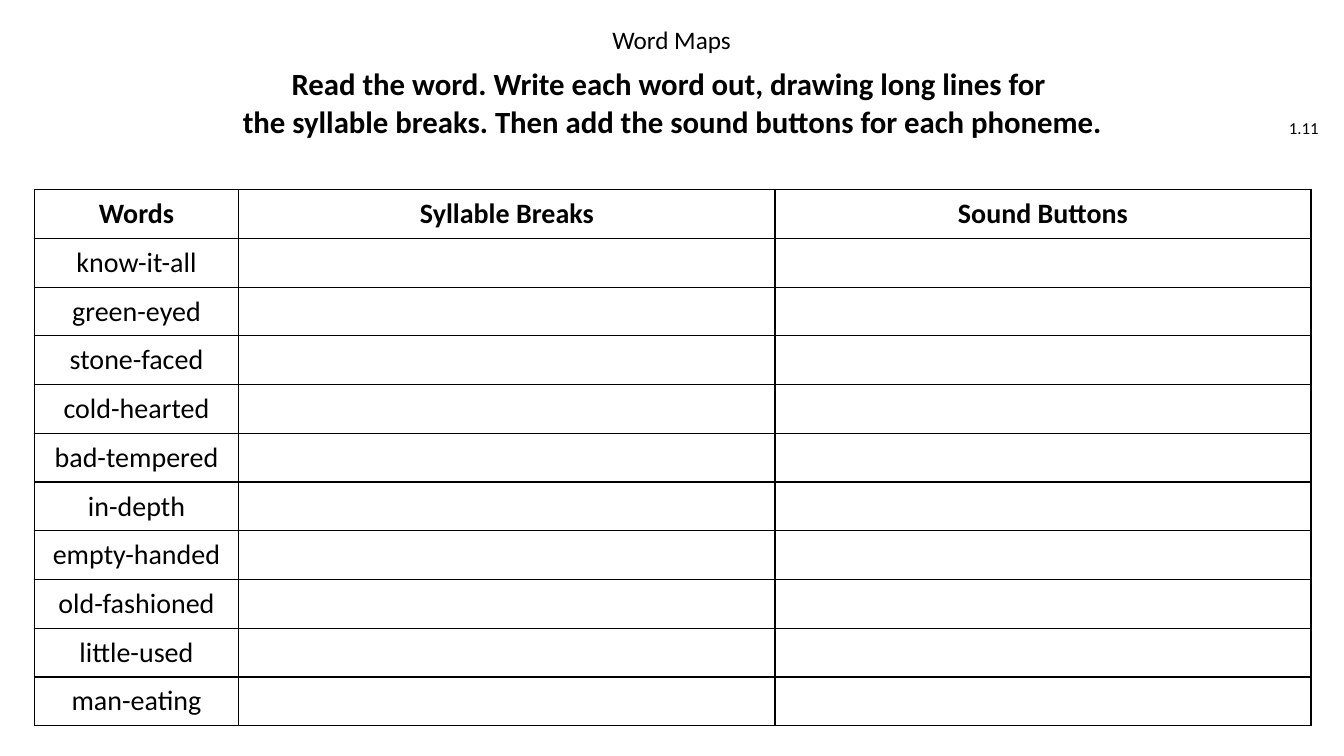
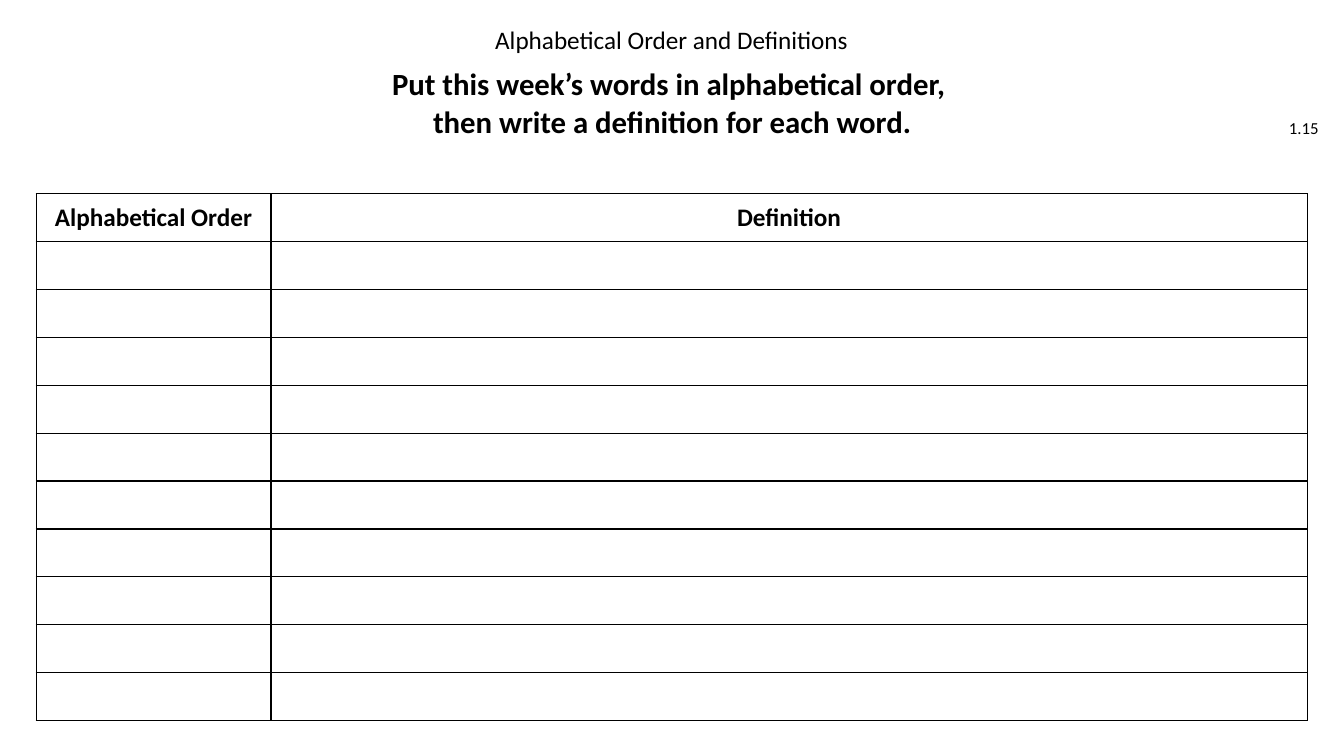
from lxml import etree
from pptx import Presentation
from pptx.dml.color import RGBColor
from pptx.enum import text as txt
from pptx.oxml import ns
from pptx.util import Cm, Pt

BLACK = "000000"
FONT = "Calibri"
CENTRE, RIGHT = txt.PP_ALIGN.CENTER, txt.PP_ALIGN.RIGHT
TOP, MIDDLE = txt.MSO_ANCHOR.TOP, txt.MSO_ANCHOR.MIDDLE

# Heading styles: font values and paragraph values
TITLE = ({"size": Pt(18)}, {"alignment": CENTRE, "line_spacing": 0.9})
INSTRUCTION = ({"size": Pt(22), "bold": True},
               {"alignment": CENTRE, "line_spacing": Pt(27)})
NUMBER = ({"size": Pt(12)}, {"alignment": RIGHT})

# Boxes as left, top, width, height in centimetres
TITLE_BOX = (9.7, 0.58, 14.45, 0.89)
INSTRUCTION_BOX = (5, 1.52, 23.88, 2.08)
NUMBER_BOX = (31.88, 2.72, 1.6, 1.02)

WORDS = ["know-it-all", "green-eyed", "stone-faced", "cold-hearted", "bad-tempered",
         "in-depth", "empty-handed", "old-fashioned", "little-used", "man-eating"]


def colour(value):
    return RGBColor.from_string(value)


def apply(target, values):
    for name, value in values.items():
        setattr(target, name, value)


def write(para, words, font, layout):
    apply(para, layout)
    span = para.add_run()
    span.text = words
    apply(span.font, {"name": FONT, **font})
    span.font.color.rgb = colour(BLACK)


def add_text(page, box, lines, style, anchor=MIDDLE):
    frame = page.shapes.add_textbox(*map(Cm, box)).text_frame
    apply(frame, {"word_wrap": True, "vertical_anchor": anchor})
    for index, line in enumerate(lines):
        para = frame.add_paragraph() if index else frame.paragraphs[0]
        write(para, line, *style)


def add_borders(cell):
    properties = cell._tc.get_or_add_tcPr()
    for side in ("lnL", "lnR", "lnT", "lnB"):
        line = etree.SubElement(properties, ns.qn(f"a:{side}"), w=str(Pt(1)))
        fill = etree.SubElement(line, ns.qn("a:solidFill"))
        etree.SubElement(fill, ns.qn("a:srgbClr"), val=BLACK)


def add_heading(page, title, instruction, number):
    add_text(page, NUMBER_BOX, [number], NUMBER)
    add_text(page, INSTRUCTION_BOX, instruction, INSTRUCTION)
    add_text(page, TITLE_BOX, [title], TITLE, TOP)


def add_grid(page, box, widths, rows, size):
    """Draw a ruled table with equal rows and a bold header."""
    grid = page.shapes.add_table(len(rows), len(widths), *map(Cm, box)).table
    apply(grid, {"first_row": False, "horz_banding": False})
    for column, width in zip(grid.columns, widths):
        column.width = Cm(width)
    for index, (row, values) in enumerate(zip(grid.rows, rows)):
        row.height = Cm(box[3] / len(rows))
        for cell, value in zip(row.cells, values):
            add_borders(cell)
            cell.fill.background()
            cell.vertical_anchor = MIDDLE
            if value:
                write(cell.text_frame.paragraphs[0], value,
                      {"size": Pt(size), "bold": index == 0}, {"alignment": CENTRE})


def main():
    deck = Presentation()
    apply(deck, {"slide_width": Cm(33.87), "slide_height": Cm(19.05)})
    blank = deck.slide_layouts[6]

    # Word maps
    page = deck.slides.add_slide(blank)
    add_heading(page, "Word Maps",
                ["Read the word. Write each word out, drawing long lines for ",
                 "the syllable breaks. Then add the sound buttons for each phoneme."], "1.11")
    rows = [("Words", "Syllable Breaks", "Sound Buttons")]
    rows += [(word, "", "") for word in WORDS]
    add_grid(page, (0.86, 4.78, 32.18, 13.51), (5.16, 13.51, 13.51), rows, 20)

    # Alphabetical order and definitions
    page = deck.slides.add_slide(blank)
    add_heading(page, "Alphabetical Order and Definitions",
                ["Put this week’s words in alphabetical order, ",
                 "then write a definition for each word."], "1.15")
    rows = [("Alphabetical Order", "Definition")] + [("", "")] * len(WORDS)
    add_grid(page, (0.91, 4.88, 32.03, 13.28), (5.92, 26.11), rows, 18)

    deck.save("out.pptx")


if __name__ == "__main__":
    main()
